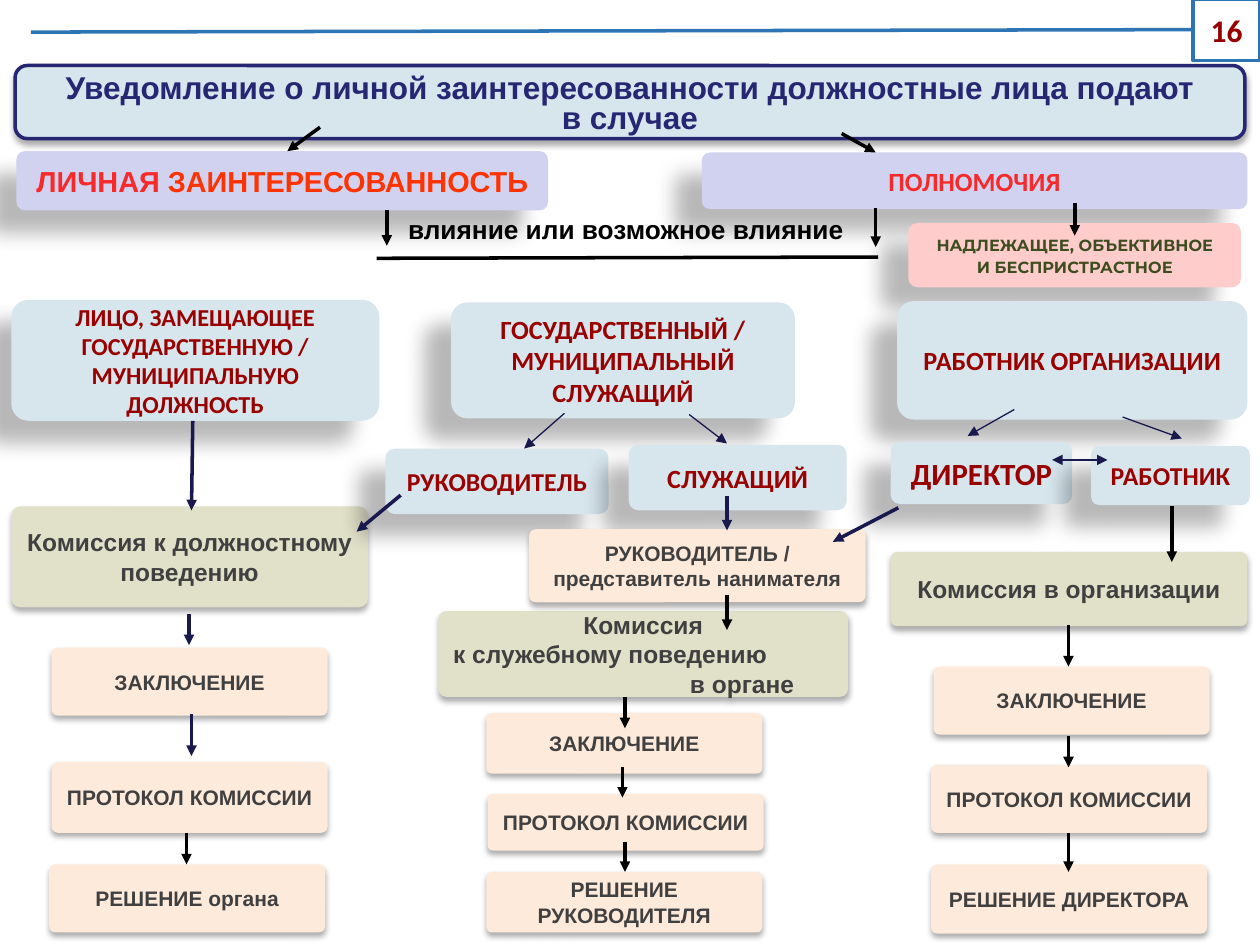
from lxml.etree import SubElement
from pptx import Presentation
from pptx.dml.color import RGBColor
from pptx.enum.shapes import MSO_CONNECTOR, MSO_SHAPE
from pptx.enum.text import MSO_ANCHOR, PP_ALIGN
from pptx.oxml.ns import qn
from pptx.util import Inches, Pt

COLUMNS, ROWS = 100, 75
CELL = Inches(10) / COLUMNS
BLACK, NAVY, RED, ORANGE = "000000", "19194D", "F72929", "FF3300"
FAR_SHADOW = (28, 11.8, 19.7, 141)
NEAR_SHADOW = (32, 3.5, 2.2, 90)

STYLES = {
    "title": dict(fill="D7E5ED", color="262673", font="Arial", radius=0.167, shadow=NEAR_SHADOW, spacing=0.8),
    "topic": dict(fill="D1D1F0", color=RED, font="Calibri", radius=0.141, shadow=FAR_SHADOW),
    "interest": dict(fill="D1D1F0", color=RED, font="Arial", radius=0.141, shadow=FAR_SHADOW),
    "quality": dict(fill="FFCCCC", color="3E4D1F", font="Montserrat", radius=0.141, shadow=FAR_SHADOW, spacing=1.1),
    "person": dict(fill="D7E5ED", color="990000", font="Calibri", radius=0.141, shadow=FAR_SHADOW),
    "commission": dict(fill="E1E1C9", color="404040", font="Arial", radius=0.089, shadow=NEAR_SHADOW),
    "step": dict(fill="FEEADA", color="404040", font="Arial", radius=0.089, shadow=NEAR_SHADOW),
}

BOXES = [
    ("topic", 55.7, 12.1, 43.3, 4.5, 15, "ПОЛНОМОЧИЯ"),
    ("title", 1.2, 5.2, 97.6, 5.8, 18,
     "Уведомление о личной заинтересованности должностные лица подают\nв случае"),
    ("interest", 1.3, 12, 42.2, 4.7, 16.5, "ЛИЧНАЯ ЗАИНТЕРЕСОВАННОСТЬ"),
    ("person", 0.9, 23.8, 29.2, 9.6, 13.9, "ЛИЦО, ЗАМЕЩАЮЩЕЕ ГОСУДАРСТВЕННУЮ / МУНИЦИПАЛЬНУЮ ДОЛЖНОСТЬ"),
    ("commission", 0.9, 40.2, 28.3, 8, 14, "Комиссия к должностному поведению"),
    ("quality", 72.1, 17.7, 26.4, 5.1, 9.2, "НАДЛЕЖАЩЕЕ, ОБЪЕКТИВНОЕ\nИ БЕСПРИСТРАСТНОЕ"),
    ("person", 35.8, 24, 27.3, 9.2, 15, "ГОСУДАРСТВЕННЫЙ / МУНИЦИПАЛЬНЫЙ СЛУЖАЩИЙ"),
    ("person", 71.2, 23.9, 27.8, 9.4, 15, "РАБОТНИК ОРГАНИЗАЦИИ"),
    ("person", 30.6, 35.6, 17.7, 5.2, 14.7, "РУКОВОДИТЕЛЬ"),
    ("person", 49.9, 35.3, 17.3, 5.2, 15, "СЛУЖАЩИЙ"),
    ("person", 70.7, 35.1, 14.4, 4.9, 17.6, "ДИРЕКТОР"),
    ("person", 86.6, 35.4, 12.6, 4.7, 14.7, "РАБОТНИК"),
    ("commission", 34.8, 48.5, 32.5, 6.8, 14, "Комиссия\nк служебному поведению\nв органе"),
    ("commission", 70.7, 43.8, 28.3, 5.9, 14, "Комиссия в организации"),
    ("step", 42, 42, 26.7, 5.8, 12, "РУКОВОДИТЕЛЬ / представитель нанимателя"),
]

STEP_WIDTH = 21.9
STEPS = ("ЗАКЛЮЧЕНИЕ", "ПРОТОКОЛ КОМИССИИ")
STEP_COLUMNS = [
    ("РЕШЕНИЕ органа", [(4.1, 51.4, 5.4), (4.1, 60.5, 5.6), (3.9, 68.6, 5.4)]),
    ("РЕШЕНИЕ РУКОВОДИТЕЛЯ", [(38.6, 56.6, 4.8), (38.7, 63, 4.5), (38.6, 69.2, 4.8)]),
    ("РЕШЕНИЕ ДИРЕКТОРА", [(74.1, 52.9, 5.4), (73.9, 60.7, 5.4), (73.9, 68.6, 5.5)]),
]

DOWN_ARROWS = {
    BLACK: [(30.7, 16.7, 19.5), (69.5, 16.5, 19.6), (85.3, 16.1, 18.7), (57.7, 47.2, 50),
            (93, 40.2, 44.6), (14.8, 66.1, 68.6), (49.6, 55.3, 57.8), (49.4, 60.9, 63.3),
            (49.6, 66.8, 69.2), (84.8, 49.6, 52.9), (84.8, 58.4, 60.9), (84.8, 66.1, 69.2)],
    NAVY: [(57.7, 39.4, 42.1), (15, 48.7, 51.2), (15.2, 56.7, 60)],
}
SLANTED_ARROWS = [
    (BLACK, 2, [(25.4, 10.1, 22.8, 12), (66.8, 10.6, 69.5, 12.1)]),
    (NAVY, 2, [(71.3, 40.3, 66.1, 43), (31.8, 39.3, 28.3, 42.2), (15.3, 33.4, 15.2, 40.5)]),
    (NAVY, 0.75, [(44.8, 32.8, 41.6, 35.6), (54.7, 32.9, 57.7, 35.2),
                  (80.5, 32.5, 76.8, 34.6), (89.1, 33.1, 93.8, 34.8)]),
]
INFLUENCE_LINE = (69.7, 20.4, 29.9, 20.5)
COLLEAGUES_ARROW = (83.5, 36.5, 87.9, 36.5)


def grid(*cells):
    return [round(cell * CELL) for cell in cells]


def rgb(color):
    return RGBColor.from_string(color)


def set_shadow(shape, opacity, blur, distance, angle):
    shape.shadow.inherit = False
    effects = shape._element.spPr.find(qn("a:effectLst"))
    shadow = SubElement(effects, qn("a:outerShdw"), blurRad=str(Pt(blur)), dist=str(Pt(distance)),
                        dir=str(angle * 60000), algn="ctr", rotWithShape="0")
    color = SubElement(shadow, qn("a:srgbClr"), val=BLACK)
    SubElement(color, qn("a:alpha"), val=str(opacity * 1000))


def write_text(shape, text, font, size, color, spacing=None, align=PP_ALIGN.CENTER):
    text_frame = shape.text_frame
    text_frame.text = text
    for paragraph in text_frame.paragraphs:
        paragraph.alignment = align
        if spacing:
            paragraph.line_spacing = spacing
        for run in paragraph.runs:
            run.font.name, run.font.size, run.font.bold = font, Pt(size), True
            run.font.color.rgb = rgb(color)


def add_box(slide, kind, left, top, width, height, size, text):
    style = STYLES[kind]
    shape = slide.shapes.add_shape(MSO_SHAPE.ROUNDED_RECTANGLE, *grid(left, top, width, height))
    shape.adjustments[0] = style["radius"]
    shape.fill.solid()
    shape.fill.fore_color.rgb = rgb(style["fill"])
    shape.line.fill.background()
    set_shadow(shape, *style["shadow"])
    shape.text_frame.word_wrap = True
    shape.text_frame.vertical_anchor = MSO_ANCHOR.MIDDLE
    write_text(shape, text, style["font"], size, style["color"], style.get("spacing"))
    return shape


def add_line(slide, ends, color=BLACK, width=2, heads=("tailEnd",)):
    line = slide.shapes.add_connector(MSO_CONNECTOR.STRAIGHT, *grid(*ends))
    line.line.color.rgb = rgb(color)
    line.line.width = Pt(width)
    for head in heads:
        SubElement(line.line._get_or_add_ln(), qn("a:" + head), type="triangle")
    SubElement(line._element.spPr, qn("a:effectLst"))


def add_page_number(slide):
    shape = slide.shapes.add_shape(MSO_SHAPE.LINE_CALLOUT_1, *grid(94.7, -0.1, 5.3, 4.9))
    for index, value in enumerate((0.5, -0.01, 0.54, -17.41)):
        shape.adjustments[index] = value
    shape.fill.background()
    shape.line.color.rgb = rgb("2E75B6")
    shape.line.width = Pt(2)
    shape.shadow.inherit = False
    shape.text_frame.vertical_anchor = MSO_ANCHOR.MIDDLE
    write_text(shape, "16", "Calibri", 18, "960000")


def main():
    """Build the slide on notifying about personal interest."""
    presentation = Presentation()
    presentation.slide_width, presentation.slide_height = grid(COLUMNS, ROWS)
    slide = presentation.slides.add_slide(presentation.slide_layouts[6])

    boxes = {box[-1]: add_box(slide, *box) for box in BOXES}
    title = boxes[BOXES[1][-1]]
    title.line.color.rgb = rgb("262673")
    title.line.width = Pt(2)
    title.text_frame.vertical_anchor = MSO_ANCHOR.TOP

    interest = boxes["ЛИЧНАЯ ЗАИНТЕРЕСОВАННОСТЬ"].text_frame.paragraphs[0]
    first_run = interest.runs[0]
    first_run.text = "ЛИЧНАЯ"
    second_run = interest.add_run()
    second_run.text = " ЗАИНТЕРЕСОВАННОСТЬ"
    second_run.font.name, second_run.font.size, second_run.font.bold = "Arial", Pt(16.5), True
    second_run.font.color.rgb = rgb(ORANGE)

    service = boxes["Комиссия\nк служебному поведению\nв органе"].text_frame.paragraphs
    service[1].alignment = service[2].alignment = PP_ALIGN.LEFT
    service[2]._p.get_or_add_pPr().set("marL", str(Inches(1.88)))

    for decision, places in STEP_COLUMNS:
        for text, (left, top, height) in zip((*STEPS, decision), places):
            add_box(slide, "step", left, top, STEP_WIDTH, height, 12, text)

    influence = slide.shapes.add_textbox(*grid(31.4, 16.4, 36.9, 3.5))
    influence.text_frame.word_wrap = False
    write_text(influence, "влияние или возможное влияние", "Arial", 15, BLACK, align=PP_ALIGN.LEFT)

    add_line(slide, INFLUENCE_LINE, heads=())
    for color, arrows in DOWN_ARROWS.items():
        for x, top, bottom in arrows:
            add_line(slide, (x, top, x, bottom), color)
    for color, width, arrows in SLANTED_ARROWS:
        for ends in arrows:
            add_line(slide, ends, color, width)
    add_line(slide, COLLEAGUES_ARROW, NAVY, 0.75, ("headEnd", "tailEnd"))
    add_page_number(slide)
    presentation.save("out.pptx")


if __name__ == "__main__":
    main()
